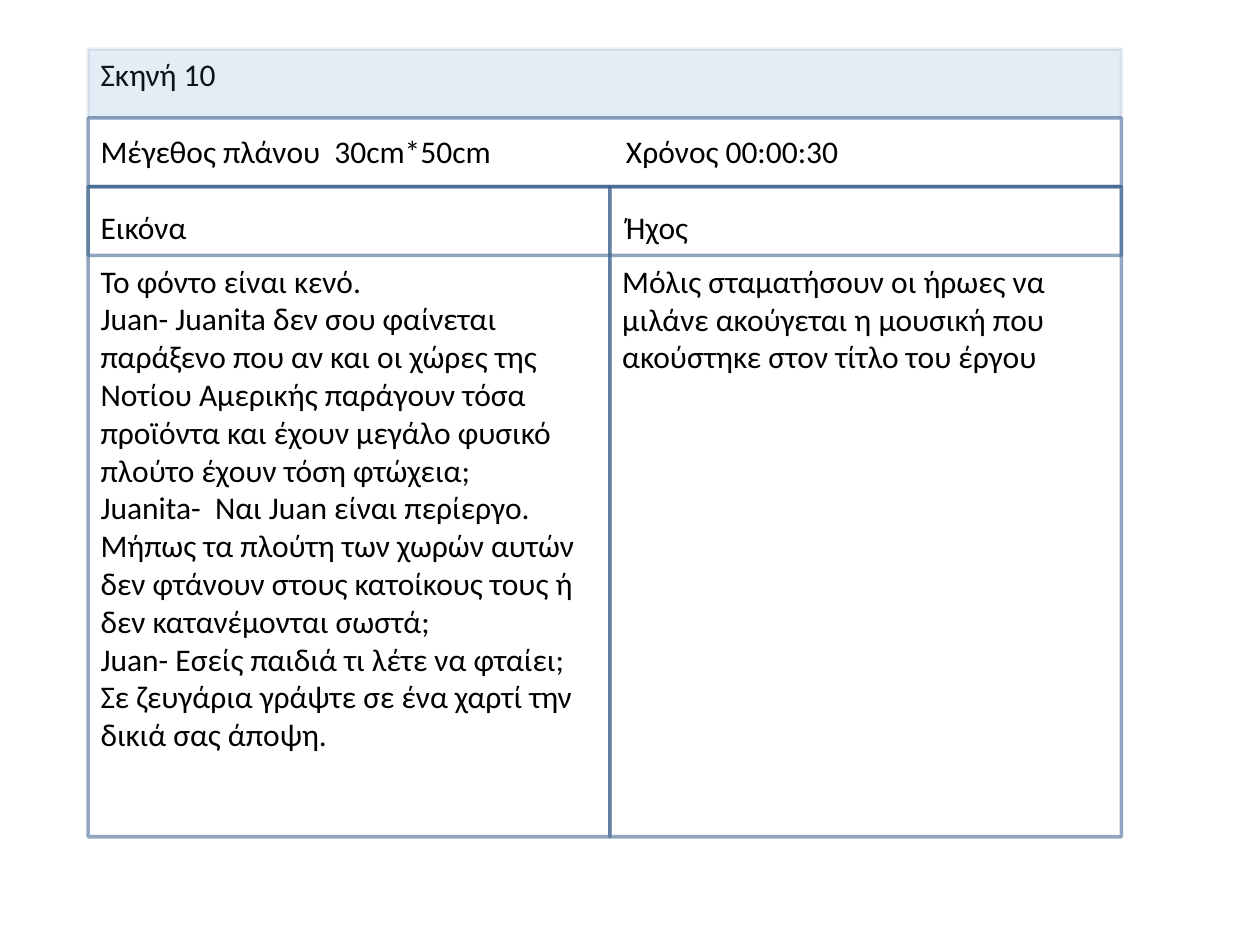
from lxml import etree
from pptx import Presentation
from pptx import util as u
from pptx.dml.color import RGBColor
from pptx.enum import shapes, text
from pptx.oxml.ns import qn

COLORS = {"text": "000000", "line": "3A5F8C", "band": "4F81BD"}
ROW = 0.546  # height of each heading row
LEFT_COL = 4.14


def set_alpha(fill, percent):
    color = fill.fore_color._xFill.find(qn("a:srgbClr"))
    etree.SubElement(color, qn("a:alpha"), val=str(percent * 1000))


def add_box(s, x, y, w, h, line_alpha=54, fill_alpha=None):
    sp = s.shapes.add_shape(shapes.MSO_SHAPE.RECTANGLE, u.Inches(x),
                            u.Inches(y), u.Inches(w), u.Inches(h))
    sp.shadow.inherit = False
    if fill_alpha is None:
        sp.fill.background()
    else:
        sp.fill.solid()
        sp.fill.fore_color.rgb = RGBColor.from_string(COLORS["band"])
        set_alpha(sp.fill, fill_alpha)
    sp.line.width = u.Pt(2)
    sp.line.fill.solid()
    sp.line.fill.fore_color.rgb = RGBColor.from_string(COLORS["line"])
    set_alpha(sp.line.fill, line_alpha)


def add_text(s, x, y, w, h, paragraphs, gap=0, tabs=()):
    """Add paragraphs, each a list of lines; tabs are in inches."""
    tf = s.shapes.add_textbox(u.Inches(x), u.Inches(y),
                              u.Inches(w), u.Inches(h)).text_frame
    tf.word_wrap = True
    tf.auto_size = text.MSO_AUTO_SIZE.SHAPE_TO_FIT_TEXT
    for i, lines in enumerate(paragraphs):
        p = tf.add_paragraph() if i else tf.paragraphs[0]
        p.space_before = u.Pt(gap if i else 0)
        if tabs:
            stops = etree.SubElement(p._p.get_or_add_pPr(), qn("a:tabLst"))
            for tab in tabs:
                etree.SubElement(stops, qn("a:tab"),
                                 pos=str(u.Inches(tab)), algn="l")
        for j, line in enumerate(lines):
            if j:
                p.add_line_break()
            r = p.add_run()
            r.text = line
            r.font.size = u.Pt(18)
            r.font.name = "Calibri"
            r.font.color.rgb = RGBColor.from_string(COLORS["text"])


def add_heading(s, x, y, w):
    """Scene title, shot details and column headings."""
    add_text(s, x, y, w, 1.62, [
        ["Σκηνή 10"],
        ["Μέγεθος πλάνου  30cm*50cm\tΧρόνος 00:00:30"],
        ["Εικόνα\tΉχος"],
    ], gap=22, tabs=(4.17, 5.75))
    add_box(s, x, y + ROW, w, ROW)
    add_box(s, x, y, w, ROW, line_alpha=10, fill_alpha=15)


def add_columns(s, x, y, w, h):
    """Picture and sound columns under a shared heading row."""
    split = x + LEFT_COL
    add_box(s, x, y, LEFT_COL, h)
    add_box(s, split, y, w - LEFT_COL, h)
    add_box(s, x, y, w, ROW)
    body = y + ROW
    add_text(s, x, body, LEFT_COL, 4.04, [
        ["Το φόντο είναι κενό.",
         "Juan- Juanita δεν σου φαίνεται παράξενο που αν και οι χώρες της "
         "Νοτίου Αμερικής παράγουν τόσα προϊόντα και έχουν μεγάλο φυσικό "
         "πλούτο έχουν τόση φτώχεια;"],
        ["Juanita-  Ναι Juan είναι περίεργο. Μήπως τα πλούτη των χωρών αυτών "
         "δεν φτάνουν στους κατοίκους τους ή δεν κατανέμονται σωστά;"],
        ["Juan- Εσείς παιδιά τι λέτε να φταίει; Σε ζευγάρια γράψτε σε ένα "
         "χαρτί την δικιά σας άποψη."],
    ])
    add_text(s, split, body, LEFT_COL, 1.01, [
        ["Μόλις σταματήσουν οι ήρωες να μιλάνε ακούγεται η μουσική που "
         "ακούστηκε στον τίτλο του έργου"],
    ])


def main():
    prs = Presentation()
    prs.slide_width, prs.slide_height = u.Inches(10), u.Inches(7.5)
    s = prs.slides.add_slide(prs.slide_layouts[6])
    x, y, w = 0.7, 0.39, 8.2
    add_heading(s, x, y, w)
    add_columns(s, x, y + 2 * ROW, w, 5.16)
    prs.save("out.pptx")


if __name__ == "__main__":
    main()
